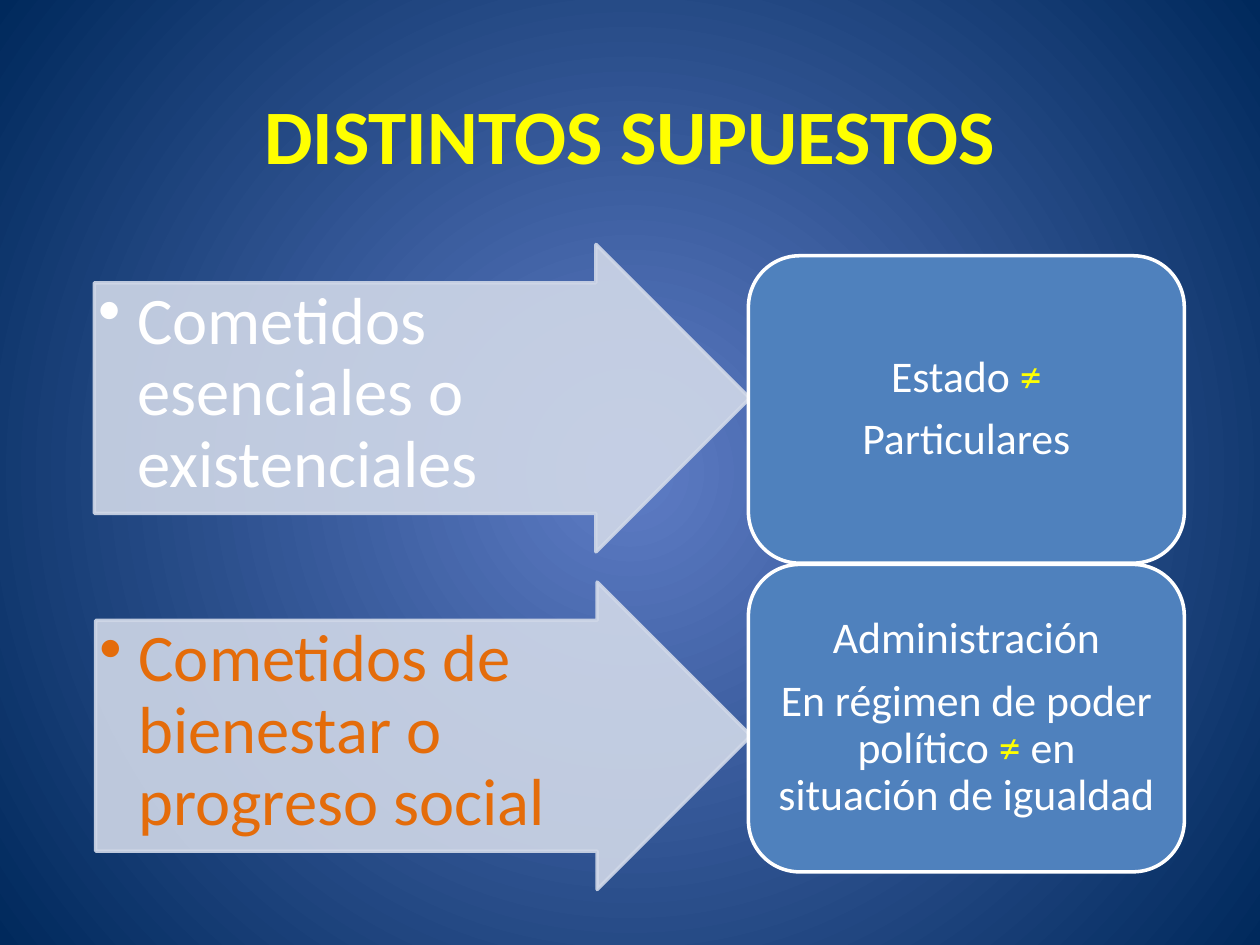
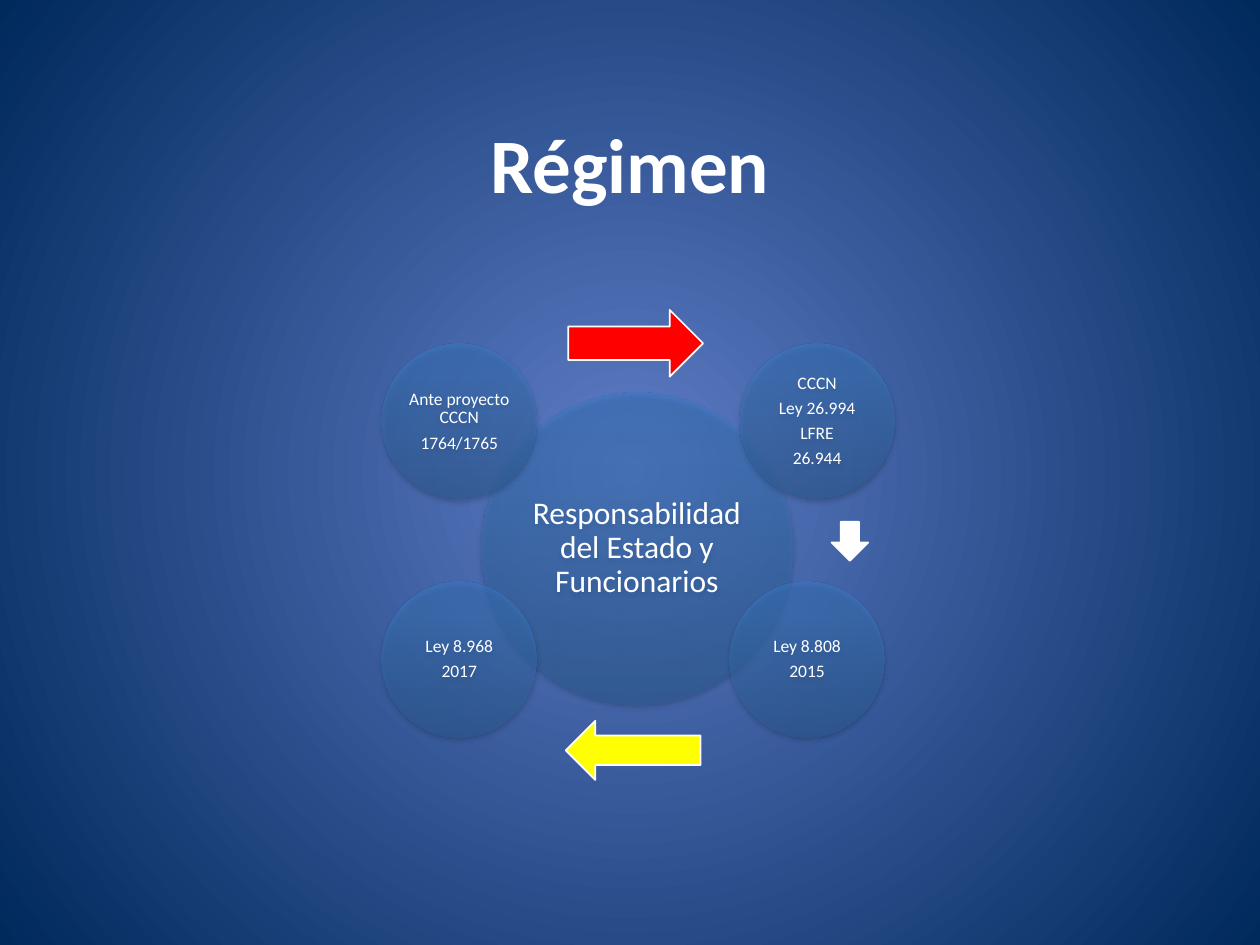
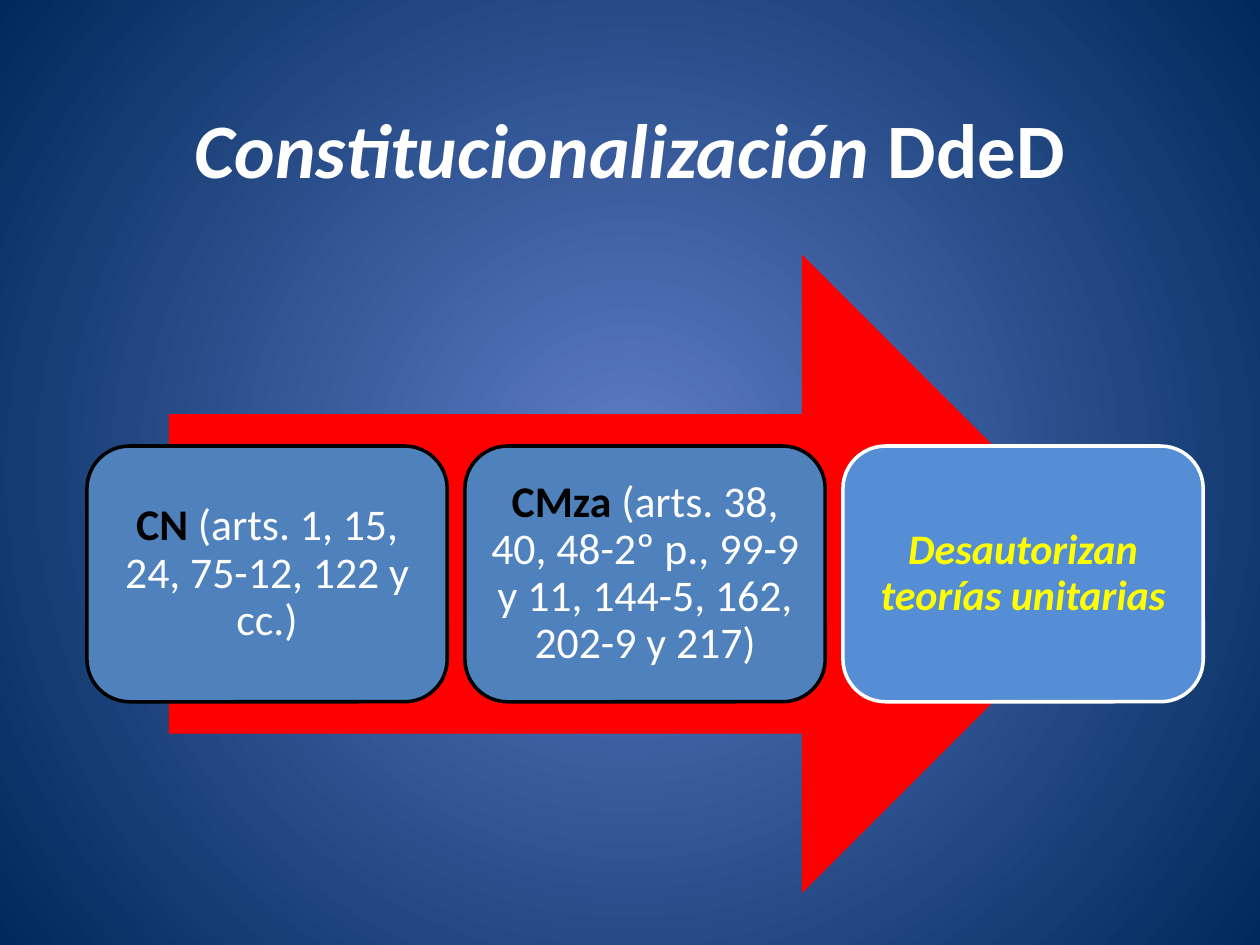
from copy import deepcopy

from pptx import Presentation
from pptx.dml.color import RGBColor
from pptx.enum.shapes import MSO_SHAPE
from pptx.enum.text import MSO_ANCHOR, PP_ALIGN
from pptx.oxml import parse_xml
from pptx.oxml.ns import nsdecls, qn
from pptx.util import Inches, Pt

RIGHT_ARROW = MSO_SHAPE.RIGHT_ARROW
LEFT_ARROW = MSO_SHAPE.LEFT_ARROW
DOWN_ARROW = MSO_SHAPE.DOWN_ARROW
ROUNDED = MSO_SHAPE.ROUNDED_RECTANGLE
OVAL = MSO_SHAPE.OVAL
CENTER, LEFT = PP_ALIGN.CENTER, PP_ALIGN.LEFT
TOP, MIDDLE = MSO_ANCHOR.TOP, MSO_ANCHOR.MIDDLE

FONT = "Calibri"
WHITE = RGBColor(0xFF, 0xFF, 0xFF)
BLACK = RGBColor(0x00, 0x00, 0x00)
YELLOW = RGBColor(0xFF, 0xFF, 0x00)
RED = RGBColor(0xFF, 0x00, 0x00)
ORANGE = RGBColor(0xE4, 0x6C, 0x0A)
BLUE = RGBColor(0x4F, 0x81, 0xBD)
LIGHT_BLUE = RGBColor(0x55, 0x8E, 0xD5)
PALE_BLUE = RGBColor(0xD0, 0xD8, 0xE8)
GLOW = RGBColor(0x5E, 0x7C, 0xC5)
NAVY = RGBColor(0x00, 0x29, 0x5C)
GLASS_STOPS = [(0, "2F5F99"), (80, "3D7CC7"), (100, "3A7CCB")]

A = nsdecls("a")
CENTRED_PATH = parse_xml(
    f'<a:path {A} path="circle">'
    '<a:fillToRect l="50000" t="50000" r="50000" b="50000"/></a:path>')
GLASS = parse_xml(
    f'<a:gradFill {A} rotWithShape="1"><a:gsLst>'
    + "".join(f'<a:gs pos="{position * 1000}"><a:srgbClr val="{color}">'
              '<a:alpha val="50000"/></a:srgbClr></a:gs>'
              for position, color in GLASS_STOPS)
    + '</a:gsLst><a:lin ang="16200000" scaled="0"/></a:gradFill>')
SOFT_SHADOW = parse_xml(
    f'<a:outerShdw {A} blurRad="40000" dist="23000" dir="5400000" rotWithShape="0">'
    '<a:srgbClr val="000000"><a:alpha val="35000"/></a:srgbClr></a:outerShdw>')
ALPHA_90 = parse_xml(f'<a:alpha {A} val="90000"/>')
BULLET = parse_xml(f'<a:buChar {A} char="•"/>')


def write(frame, paragraphs, size=25, color=WHITE, bold=False, italic=False,
          align=CENTER, anchor=MIDDLE, spacing=0.9, after=0.35, margins=(0.1, 0.05)):
    """Fill a frame; a paragraph lists runs, each a string or (string, font changes)."""
    frame.word_wrap = True
    frame.vertical_anchor = anchor
    frame.margin_left = frame.margin_right = Inches(margins[0])
    frame.margin_top = frame.margin_bottom = Inches(margins[1])
    for number, runs in enumerate(paragraphs):
        paragraph = frame.paragraphs[0] if number == 0 else frame.add_paragraph()
        paragraph.alignment = align
        paragraph.line_spacing = spacing
        paragraph.space_before = Pt(0)
        paragraph.space_after = Pt(round(after * size, 2))
        for part in runs:
            text, changes = (part, {}) if isinstance(part, str) else part
            run = paragraph.add_run()
            run.text = text
            run.font.name = FONT
            run.font.size = Pt(size)
            run.font.color.rgb = changes.get("color", color)
            run.font.bold = changes.get("bold", bold)
            run.font.italic = changes.get("italic", italic)


def add_block(slide, kind, left, top, width, height, fill, line=None, weight=2):
    block = slide.shapes.add_shape(
        kind, Inches(left), Inches(top), Inches(width), Inches(height))
    block.shadow.inherit = False
    block.fill.solid()
    block.fill.fore_color.rgb = fill
    if line is None:
        block.line.fill.background()
    else:
        block.line.color.rgb = line
        block.line.width = Pt(weight)
    return block


prs = Presentation()
prs.slide_width, prs.slide_height = Inches(10), Inches(7.5)

backdrop = prs.slide_master.background.fill
backdrop.gradient()
for stop, color in zip(backdrop.gradient_stops, (GLOW, NAVY)):
    stop.color.rgb = color
linear = prs.slide_master.element.find(".//" + qn("a:lin"))
linear.getparent().replace(linear, CENTRED_PATH)

# Titles of the three slides
TITLES = [
    (0.44, 1.25, YELLOW, ["DISTINTOS SUPUESTOS"]),
    (0.67, 1.25, WHITE, ["Régimen"]),
    (0.44, 1.47, WHITE, [("Constitucionalización ", {"italic": True}), "DdeD"]),
]
slides = []
for top, height, color, runs in TITLES:
    slide = prs.slides.add_slide(prs.slide_layouts[5])
    title = slide.shapes.title
    title.left, title.top = Inches(0.75), Inches(top)
    title.width, title.height = Inches(8.5), Inches(height)
    write(title.text_frame, [runs], size=44, color=color, bold=True, spacing=1.0, after=0)
    slides.append(slide)
supuestos, regimen, constitucion = slides

# Slide 1: each kind of task points to who performs it
NOT_EQUAL = ("≠", {"color": YELLOW})
TASKS = [
    (0.75, 1.94, WHITE, "Cometidos esenciales o existenciales",
     2.03, [["Estado ", NOT_EQUAL], ["Particulares"]]),
    (0.76, 4.62, ORANGE, "Cometidos de bienestar o progreso social",
     4.48, [["Administración"],
            ["En régimen de poder político ", NOT_EQUAL, " en situación de igualdad"]]),
]
for left, task_top, color, task, actor_top, actors in TASKS:
    arrow = add_block(supuestos, RIGHT_ARROW, left, task_top, 5.2, 2.44, PALE_BLUE, PALE_BLUE)
    arrow.adjustments[0], arrow.adjustments[1] = 0.75, 0.5
    for tint in arrow.element.spPr.iter(qn("a:srgbClr")):
        tint.append(deepcopy(ALPHA_90))
    write(arrow.text_frame, [[task]], size=38, color=color, align=LEFT, anchor=TOP,
          after=0.15, margins=(0.03, 0.03))
    paragraph = arrow.text_frame.paragraphs[0]
    paragraph.level = 1
    properties = paragraph._p.get_or_add_pPr()
    properties.set("marL", str(Inches(0.31)))
    properties.set("indent", str(-Inches(0.31)))
    properties.append(deepcopy(BULLET))

    actor = add_block(supuestos, ROUNDED, 5.94, actor_top, 3.46, 2.44, BLUE, WHITE)
    write(actor.text_frame, actors)

# Slide 2: laws around the central subject
CIRCLES = [
    (3.82, 3.12, 2.47, 18, 0.03, ["Responsabilidad del Estado y Funcionarios"]),
    (5.87, 2.73, 1.23, 10, 0.01, ["CCCN", "Ley 26.994", "LFRE", "26.944"]),
    (5.79, 4.62, 1.23, 10, 0.01, ["Ley 8.808", "2015"]),
    (3.03, 4.62, 1.23, 10, 0.01, ["Ley 8.968", "2017"]),
    (3.03, 2.73, 1.23, 10, 0.01, ["Ante proyecto CCCN", "1764/1765"]),
]
for left, top, diameter, size, margin, lines in CIRCLES:
    circle = add_block(regimen, OVAL, left, top, diameter, diameter, BLUE)
    outline = circle.element.spPr
    outline.replace(outline.find(qn("a:solidFill")), deepcopy(GLASS))
    outline.find(qn("a:effectLst")).append(deepcopy(SOFT_SHADOW))
    write(circle.text_frame, [[line] for line in lines], size=size, margins=(margin, margin))

STEPS = [
    (RIGHT_ARROW, 4.51, 2.46, 1.07, 0.53, RED),
    (DOWN_ARROW, 6.6, 4.14, 0.29, 0.31, WHITE),
    (LEFT_ARROW, 4.49, 5.72, 1.07, 0.47, YELLOW),
]
for step in STEPS:
    add_block(regimen, *step, line=WHITE, weight=1)

# Slide 3: constitutional sources and their consequence
add_block(constitucion, RIGHT_ARROW, 1.34, 2.02, 7.56, 5.07, RED)
SOURCE_NAME = {"color": BLACK, "bold": True}
SOURCES = [
    (BLUE, BLACK, 25, [("CN", SOURCE_NAME), " (arts. 1, 15, 24, 75-12, 122 y cc.)"]),
    (BLUE, BLACK, 25, [("CMza", SOURCE_NAME),
                       " (arts. 38, 40, 48-2º p., 99-9 y 11, 144-5, 162, 202-9 y 217)"]),
    (LIGHT_BLUE, WHITE, 24, [("Desautorizan teorías unitarias",
                              {"color": YELLOW, "bold": True, "italic": True})]),
]
for column, (fill, line, size, runs) in enumerate(SOURCES):
    source = add_block(constitucion, ROUNDED, 0.69 + 3 * column, 3.54, 2.86, 2.03, fill, line)
    write(source.text_frame, [runs], size=size, margins=(0.1, 0.1))

prs.save("out.pptx")
